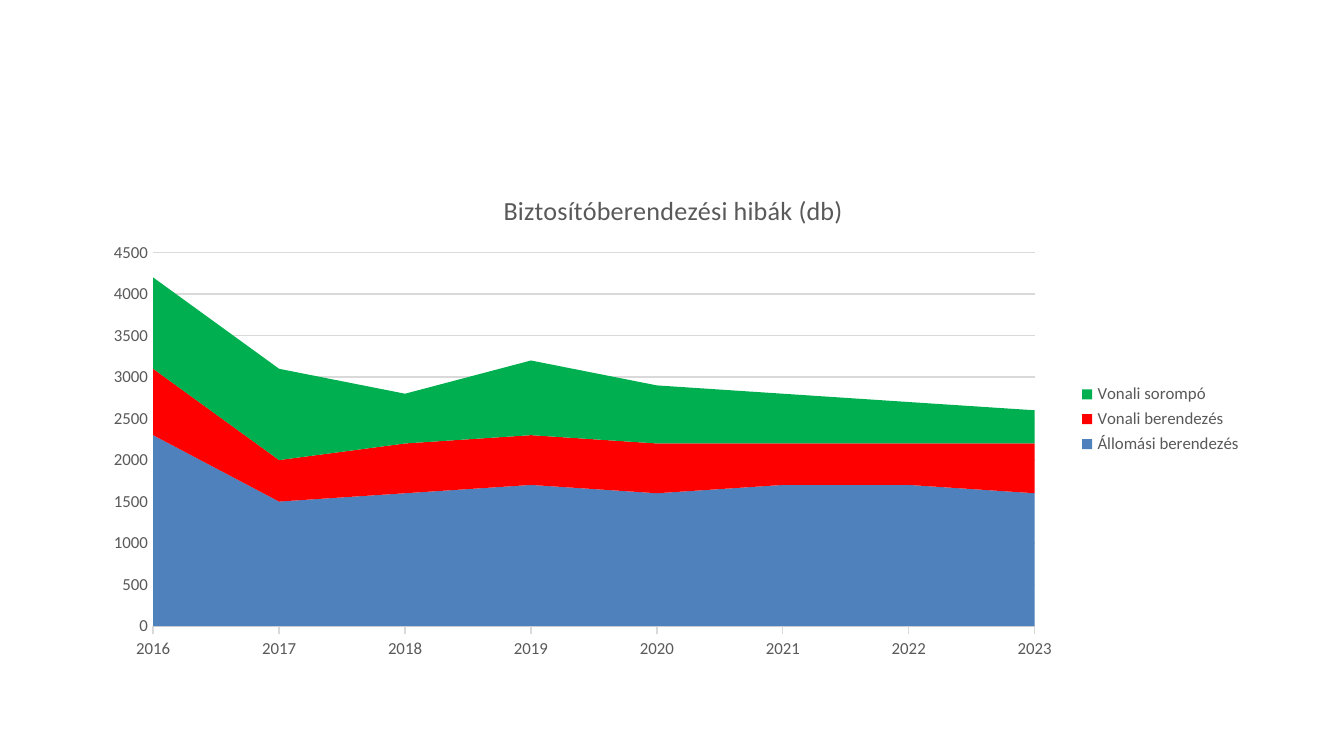
from dataclasses import dataclass

from lxml import etree
from pptx import Presentation
from pptx.chart.data import CategoryChartData
from pptx.dml.color import RGBColor
from pptx.enum import chart as kinds
from pptx.oxml import ns
from pptx.util import Inches, Pt


@dataclass(frozen=True)
class Theme:
    font: str = "Calibri"
    text: RGBColor = RGBColor(0x59, 0x59, 0x59)
    line: RGBColor = RGBColor(0xD9, 0xD9, 0xD9)
    station: RGBColor = RGBColor(0x4F, 0x81, 0xBD)
    track: RGBColor = RGBColor(0xFF, 0x00, 0x00)
    barrier: RGBColor = RGBColor(0x00, 0xB0, 0x50)
    title_size: int = 14
    label_size: int = 9
    line_width: float = 0.75


THEME = Theme()
CHART_WIDTH, CHART_HEIGHT = Inches(8.66), Inches(3.7)
YEARS = [str(year) for year in range(2016, 2024)]
FAULTS = [
    ("Állomási berendezés", THEME.station,
     [2300, 1500, 1600, 1700, 1600, 1700, 1700, 1600]),
    ("Vonali berendezés", THEME.track,
     [800, 500, 600, 600, 600, 500, 500, 600]),
    ("Vonali sorompó", THEME.barrier,
     [1100, 1100, 600, 900, 700, 600, 500, 400]),
]


def style_font(font, size):
    font.name = THEME.font
    font.size = Pt(size)
    font.bold = False
    font.color.rgb = THEME.text


def style_line(line):
    line.color.rgb = THEME.line
    line.width = Pt(THEME.line_width)


def add_fault_chart(page):
    data = CategoryChartData(number_format="General")
    data.categories = YEARS
    for name, _, values in FAULTS:
        data.add_series(name, values)
    frame = page.shapes.add_chart(
        kinds.XL_CHART_TYPE.AREA_STACKED,
        Inches(0.68), Inches(1.27), CHART_WIDTH, CHART_HEIGHT, data)
    chart = frame.chart
    style_font(chart.font, THEME.label_size)
    chart.plots[0].vary_by_categories = False
    for series, (_, color, _) in zip(chart.plots[0].series, FAULTS):
        series.format.fill.solid()
        series.format.fill.fore_color.rgb = color
        series.format.line.fill.background()
    return chart


def add_chart_title(chart, wording):
    chart.has_title = True
    chart.chart_title.include_in_layout = False
    para = chart.chart_title.text_frame.paragraphs[0]
    para.text = wording
    style_font(para.font, THEME.title_size)


def style_axes(chart):
    years, counts = chart.category_axis, chart.value_axis
    for axis in (years, counts):
        axis.minor_tick_mark = kinds.XL_TICK_MARK.NONE
        style_font(axis.tick_labels.font, THEME.label_size)
    years.has_major_gridlines = False
    years.major_tick_mark = kinds.XL_TICK_MARK.OUTSIDE
    style_line(years.format.line)
    counts.minimum_scale, counts.maximum_scale = 0, 4500
    counts.major_unit = 500
    counts.major_tick_mark = kinds.XL_TICK_MARK.NONE
    counts.format.line.fill.background()
    counts.has_major_gridlines = True
    style_line(counts.major_gridlines.format.line)


def add_legend(chart):
    chart.has_legend = True
    chart.legend.position = kinds.XL_LEGEND_POSITION.RIGHT
    chart.legend.include_in_layout = False
    style_font(chart.legend.font, THEME.label_size)


def place_plot(chart, left, top, width, height):
    """Fix the inner plot area, measured from the chart frame's corner."""
    area = chart.element.find(".//" + ns.qn("c:plotArea"))
    for old in area.findall(ns.qn("c:layout")):
        area.remove(old)
    layout = etree.Element(ns.qn("c:layout"))
    manual = etree.SubElement(layout, ns.qn("c:manualLayout"))
    settings = {"layoutTarget": "inner", "xMode": "edge", "yMode": "edge",
                "x": left / CHART_WIDTH, "y": top / CHART_HEIGHT,
                "w": width / CHART_WIDTH, "h": height / CHART_HEIGHT}
    for tag, value in settings.items():
        etree.SubElement(manual, ns.qn("c:" + tag), val=str(value))
    area.insert(0, layout)


def main():
    deck = Presentation()
    deck.slide_width = Inches(10)
    deck.slide_height = deck.slide_width * 9 // 16
    page = deck.slides.add_slide(deck.slide_layouts.get_by_name("Blank"))
    chart = add_fault_chart(page)
    add_chart_title(chart, "Biztosítóberendezési hibák (db)")
    style_axes(chart)
    add_legend(chart)
    place_plot(chart, Inches(0.46), Inches(0.61), Inches(6.56), Inches(2.78))
    deck.save("out.pptx")


if __name__ == "__main__":
    main()
